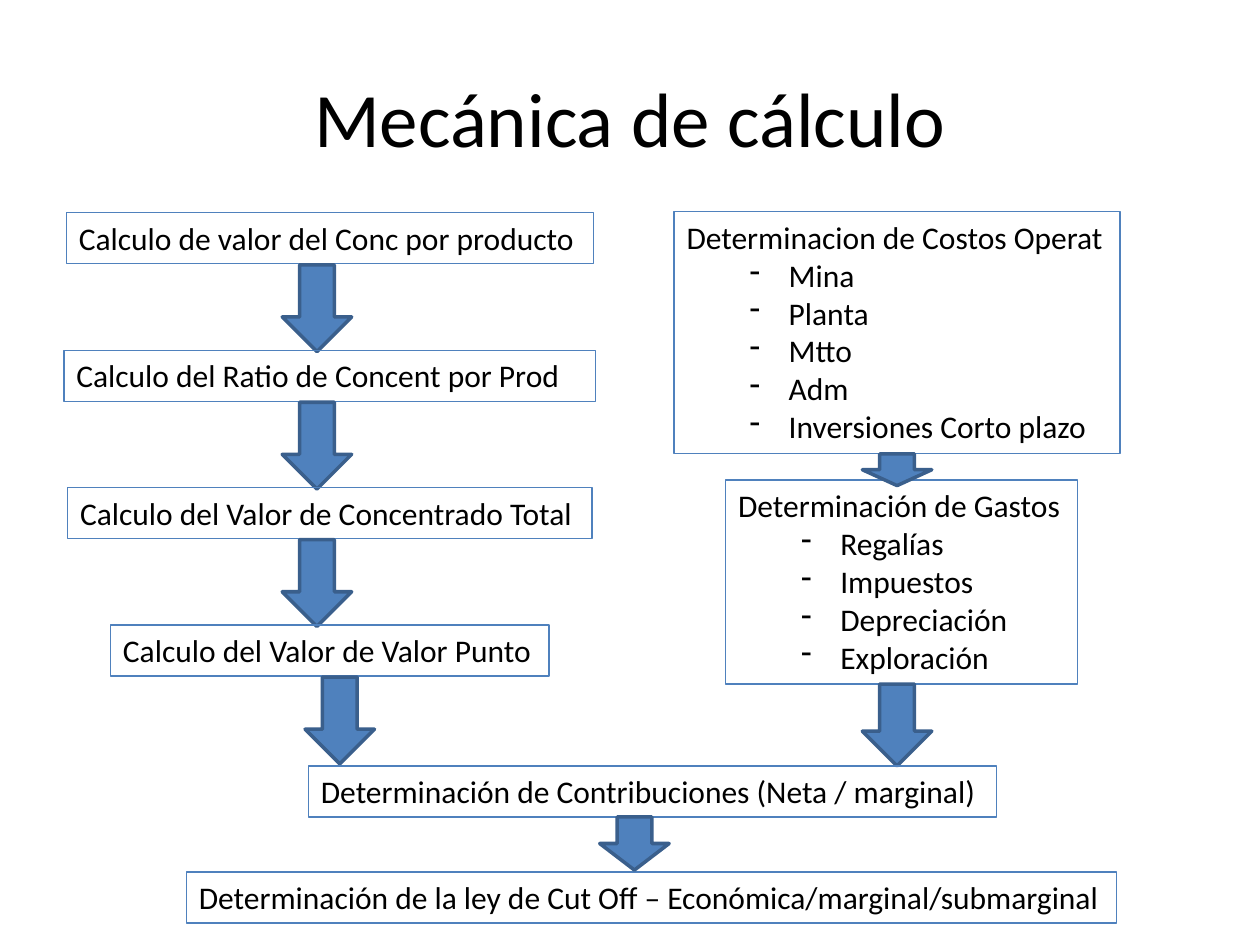
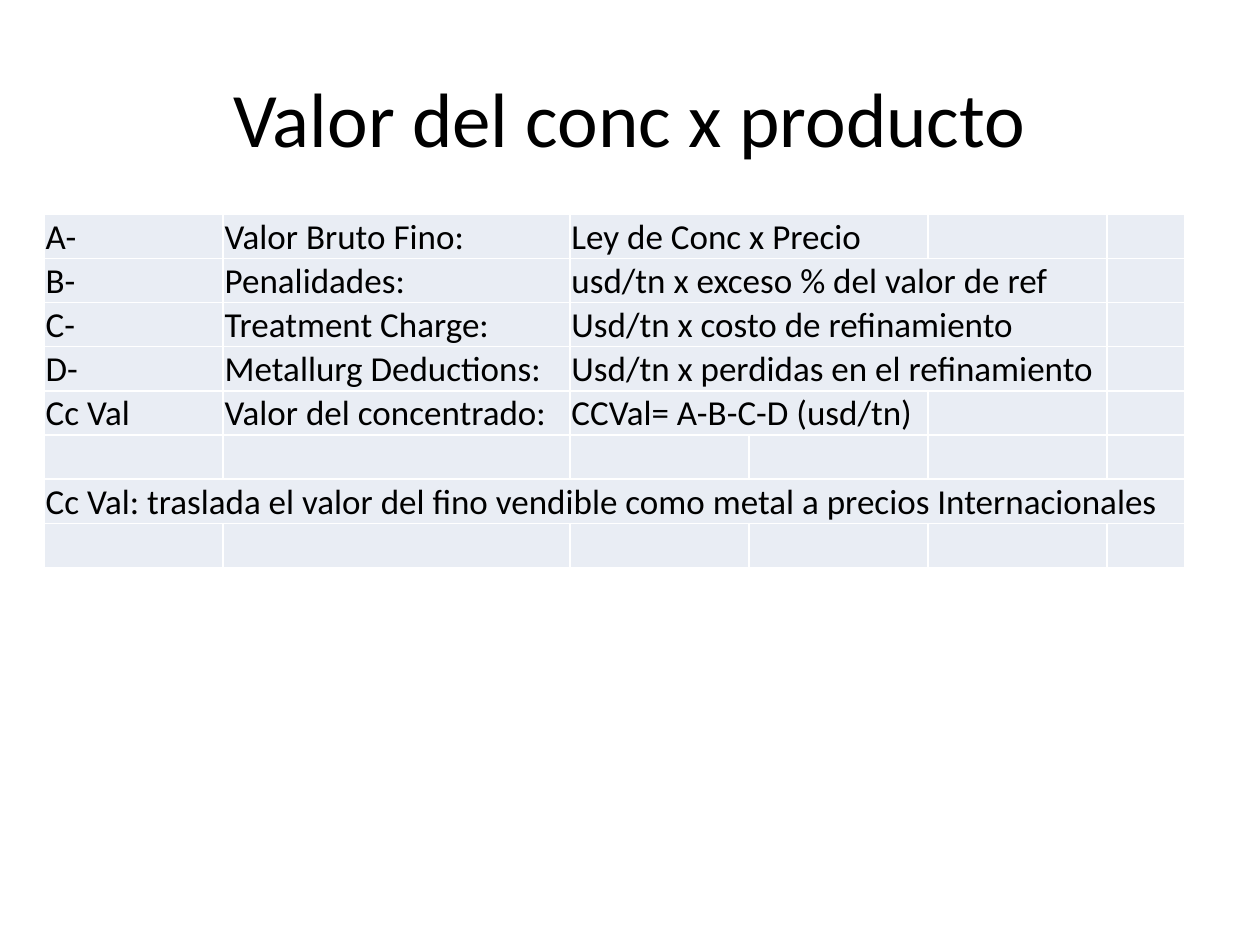
from dataclasses import dataclass

from lxml.etree import SubElement
from pptx import Presentation
from pptx.dml.color import RGBColor as Rgb
from pptx.enum.shapes import MSO_SHAPE as Preset
from pptx.enum.text import MSO_ANCHOR as Anchor, MSO_AUTO_SIZE as AutoSize, PP_ALIGN as Align
from pptx.oxml.ns import qn
from pptx.util import Cm, Pt


@dataclass(frozen=True)
class Theme:
    font: str = "Calibri"
    title_size: int = 44
    step_size: int = 18
    table_size: int = 20
    ink: Rgb = Rgb.from_string("000000")
    accent: Rgb = Rgb.from_string("4F81BD")
    arrow_edge: Rgb = Rgb.from_string("3A5F8C")
    cell: Rgb = Rgb.from_string("E9EDF4")
    cell_border: str = "FFFFFF"


@dataclass(frozen=True)
class Box:
    """A region of the slide, in centimetres."""
    left: float
    top: float
    width: float
    height: float

    def emu(self):
        return [Cm(side) for side in (self.left, self.top, self.width, self.height)]


THEME = Theme()
STEP_HEIGHT = 1.03
ARROW_WIDTH = 1.4

PRODUCT_STEPS = [
    ("Calculo de valor del Conc por producto", 10.62),
    ("Calculo del Ratio de Concent por Prod", 10.72),
    ("Calculo del Valor de Concentrado Total", 10.57),
    ("Calculo del Valor de Valor Punto", 8.84),
]
COSTS = ("Determinacion de Costos Operat",
         ["Mina", "Planta", "Mtto", "Adm", "Inversiones Corto plazo"])
EXPENSES = ("Determinación de Gastos",
            ["Regalías", "Impuestos", "Depreciación", "Exploración"])
CONTRIBUTIONS = "Determinación de Contribuciones (Neta / marginal)"
CUT_OFF = "Determinación de la ley de Cut Off – Económica/marginal/submarginal"

COLUMN_WIDTHS = [3.61, 6.99, 3.61, 3.61, 3.61, 1.57]
# Each row lists (text, columns spanned); the remaining columns stay empty.
VALUE_ROWS = [
    [("A-", 1), ("Valor Bruto Fino:", 1), ("Ley de Conc x Precio", 2)],
    [("B-", 1), ("Penalidades:", 1), ("usd/tn x exceso % del valor de ref", 3)],
    [("C-", 1), ("Treatment Charge:", 1), ("Usd/tn x costo de refinamiento", 3)],
    [("D-", 1), ("Metallurg Deductions:", 1), ("Usd/tn x perdidas en el refinamiento", 3)],
    [("Cc Val", 1), ("Valor del concentrado:", 1), ("CCVal= A-B-C-D (usd/tn)", 2)],
    [],
    [("Cc Val: traslada el valor del fino vendible como metal a precios Internacionales", 6)],
    [],
]


def style(paragraph, size):
    font = paragraph.font
    font.name, font.size = THEME.font, Pt(size)
    font.color.rgb = THEME.ink


def add_title(slide, text, box=Box(1.27, 0.76, 22.86, 3.18)):
    frame = slide.shapes.add_textbox(*box.emu()).text_frame
    frame.word_wrap = True
    frame.vertical_anchor = Anchor.MIDDLE
    heading = frame.paragraphs[0]
    heading.text = text
    heading.alignment = Align.CENTER
    style(heading, THEME.title_size)


def add_dash(paragraph):
    paragraph.level = 1
    properties = paragraph._p.get_or_add_pPr()
    properties.set("marL", str(Cm(2.06)))
    properties.set("indent", str(Cm(-0.79)))
    SubElement(properties, qn("a:buFontTx"))
    SubElement(properties, qn("a:buChar"), char="-")


def add_step(slide, box, text, items=()):
    """Outlined step with an optional dashed list under its text."""
    step = slide.shapes.add_textbox(*box.emu())
    step.line.color.rgb = THEME.accent
    step.line.width = Pt(0.75)
    frame = step.text_frame
    frame.word_wrap = False
    frame.auto_size = AutoSize.SHAPE_TO_FIT_TEXT
    frame.paragraphs[0].text = text
    for item in items:
        entry = frame.add_paragraph()
        entry.text = item
        add_dash(entry)
    for paragraph in frame.paragraphs:
        style(paragraph, THEME.step_size)


def add_down_arrow(slide, center, top, height):
    box = Box(center - ARROW_WIDTH / 2, top, ARROW_WIDTH, height)
    arrow = slide.shapes.add_shape(Preset.DOWN_ARROW, *box.emu())
    arrow.shadow.inherit = False
    arrow.fill.solid()
    arrow.fill.fore_color.rgb = THEME.accent
    arrow.line.color.rgb = THEME.arrow_edge
    arrow.line.width = Pt(2)


def add_product_column(slide, box):
    center = box.left + box.width / 2
    pitch = (box.height - STEP_HEIGHT) / (len(PRODUCT_STEPS) - 1)
    for index, (text, width) in enumerate(PRODUCT_STEPS):
        top = box.top + index * pitch
        add_step(slide, Box(center - width / 2, top, width, STEP_HEIGHT), text)
        is_last = index == len(PRODUCT_STEPS) - 1
        arrow_center = center + (0.2 if is_last else -0.26)
        add_down_arrow(slide, arrow_center, top + STEP_HEIGHT + 0.02, 1.75)


def add_cost_column(slide, box):
    center = box.left + box.width / 2
    costs_height, expenses_top = 4.88, 5.41
    add_step(slide, Box(box.left, box.top, box.width, costs_height), *COSTS)
    add_step(slide, Box(box.left + 1.04, box.top + expenses_top, 7.09,
                        box.height - expenses_top), *EXPENSES)
    add_down_arrow(slide, center, box.top + costs_height, 0.64)
    add_down_arrow(slide, center, box.top + box.height, 1.65)


def add_result(slide, box):
    """Contributions leading down to the cut-off grade."""
    add_step(slide, Box(box.left + 2.46, box.top, 13.87, STEP_HEIGHT), CONTRIBUTIONS)
    add_step(slide, Box(box.left, box.top + box.height - STEP_HEIGHT, box.width, STEP_HEIGHT),
             CUT_OFF)
    add_down_arrow(slide, box.left + 9.03, box.top + STEP_HEIGHT, 1.07)


def format_cell(cell):
    cell.margin_left = cell.margin_right = cell.margin_top = Cm(0.03)
    cell.margin_bottom = 0
    cell.vertical_anchor = Anchor.BOTTOM
    properties = cell._tc.get_or_add_tcPr()
    for side in ("lnL", "lnR", "lnT", "lnB"):
        border = SubElement(properties, qn(f"a:{side}"), w=str(Pt(1)))
        color = SubElement(border, qn("a:solidFill"))
        SubElement(color, qn("a:srgbClr"), val=THEME.cell_border)
    cell.fill.solid()
    cell.fill.fore_color.rgb = THEME.cell
    style(cell.text_frame.paragraphs[0], THEME.table_size)


def add_value_table(slide, box):
    table = slide.shapes.add_table(len(VALUE_ROWS), len(COLUMN_WIDTHS), *box.emu()).table
    table.first_row = table.horz_banding = False
    for column, width in zip(table.columns, COLUMN_WIDTHS):
        column.width = Cm(width)
    for row_index, entries in enumerate(VALUE_ROWS):
        table.rows[row_index].height = Cm(box.height / len(VALUE_ROWS))
        column_index = 0
        for text, span in entries:
            cell = table.cell(row_index, column_index)
            cell.text = text
            if span > 1:
                cell.merge(table.cell(row_index, column_index + span - 1))
            column_index += span
    for cell in table.iter_cells():
        format_cell(cell)


def build_mechanics_slide(slide):
    add_title(slide, "Mecánica de cálculo")
    add_product_column(slide, Box(1.29, 4.29, 10.72, 9.34))
    add_cost_column(slide, Box(13.59, 4.27, 8.99, 9.52))
    add_result(slide, Box(3.76, 15.44, 18.75, 3.17))


def build_value_slide(slide):
    add_title(slide, "Valor del conc x producto")
    add_value_table(slide, Box(0.89, 4.32, sum(COLUMN_WIDTHS), 7.12))


def main():
    deck = Presentation()
    deck.slide_width, deck.slide_height = Cm(25.4), Cm(19.05)
    blank = deck.slide_layouts[6]
    for build in (build_mechanics_slide, build_value_slide):
        build(deck.slides.add_slide(blank))
    deck.save("out.pptx")


if __name__ == "__main__":
    main()
